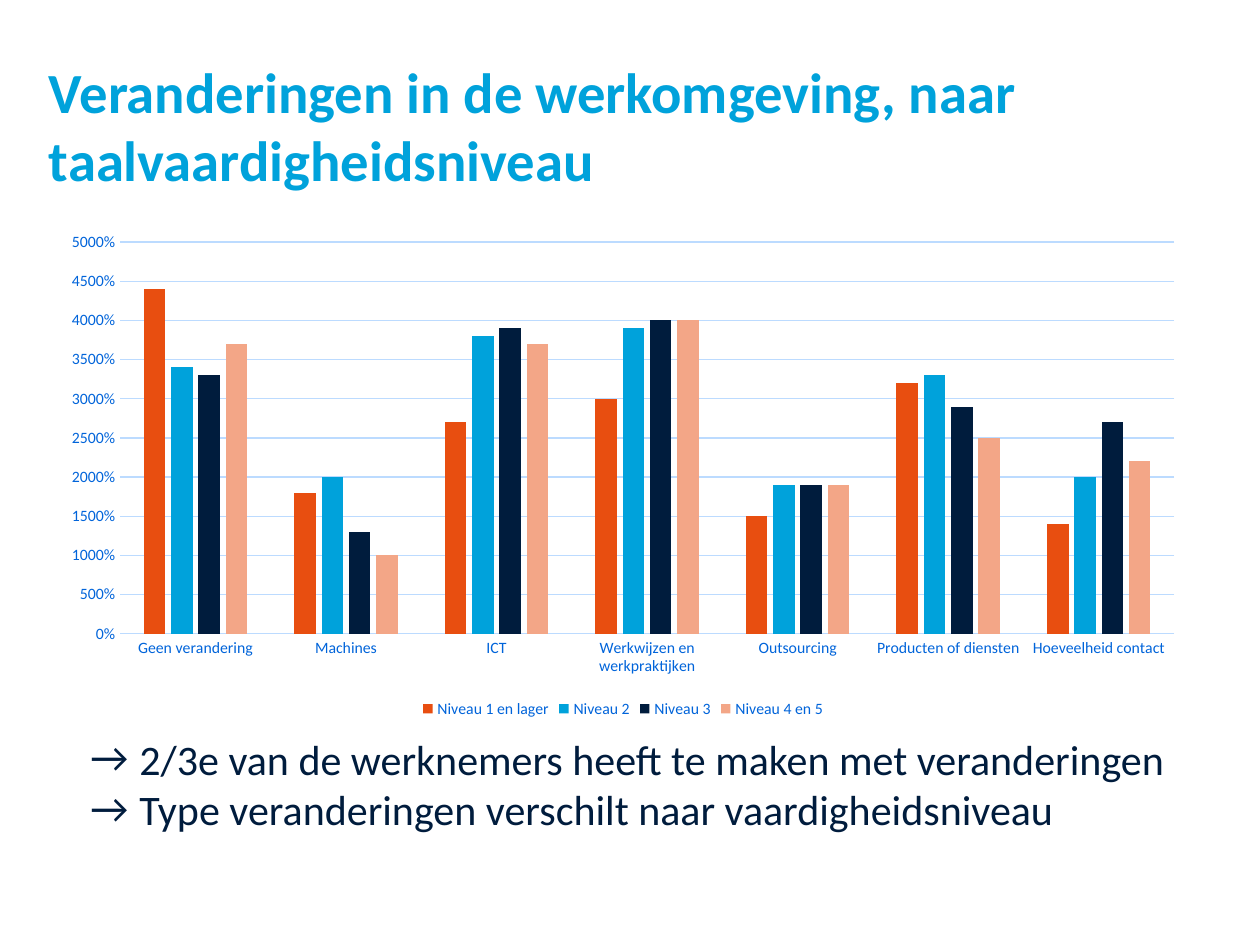
from lxml import etree
from pptx import Presentation
from pptx import util as u
from pptx.chart.data import CategoryChartData
from pptx.dml.color import RGBColor
from pptx.enum import chart as charts
from pptx.enum import text as texts
from pptx.oxml.ns import qn

SKY, NAVY, BLUE, PALE = "00A2DB", "001C3D", "0064DA", "BCDBFF"
CATS = ["Geen verandering", "Machines", "ICT", "Werkwijzen en werkpraktijken",
        "Outsourcing", "Producten of diensten", "Hoeveelheid contact"]
LEVELS = [
    ("Niveau 1 en lager", "E84E10", [44, 18, 27, 30, 15, 32, 14]),
    ("Niveau 2", SKY, [34, 20, 38, 39, 19, 33, 20]),
    ("Niveau 3", NAVY, [33, 13, 39, 40, 19, 29, 27]),
    ("Niveau 4 en 5", "F3A687", [37, 10, 37, 40, 19, 25, 22]),
]
POINTS = ["2/3e van de werknemers heeft te maken met veranderingen",
          "Type veranderingen verschilt naar vaardigheidsniveau"]


def tint(code):
    return RGBColor.from_string(code)


class Deck:
    face = "Calibri"

    def __init__(self, wide, high):
        self.show = Presentation()
        self.show.slide_width, self.show.slide_height = u.Pt(wide), u.Pt(high)
        self.page = self.show.slides.add_slide(self.show.slide_layouts[6])

    def style(self, font, size, code, bold=False):
        font.name, font.size, font.bold = self.face, u.Pt(size), bold
        font.color.rgb = tint(code)

    def text(self, box, lines, size, code, bold=False, inset=(0, 0), mark=None):
        frame = self.page.shapes.add_textbox(*map(u.Pt, box)).text_frame
        frame.word_wrap = True
        frame.vertical_anchor = texts.MSO_ANCHOR.TOP
        frame.margin_left = frame.margin_right = u.Pt(inset[0])
        frame.margin_top = frame.margin_bottom = u.Pt(inset[1])
        for i, line in enumerate(lines):
            para = frame.add_paragraph() if i else frame.paragraphs[0]
            if mark:
                self.bullet(para, mark, 28)
            run = para.add_run()
            run.text = line
            self.style(run.font, size, code, bold)

    def bullet(self, para, mark, gap):
        props = para._p.get_or_add_pPr()
        props.set("marL", str(u.Pt(gap)))
        props.set("indent", str(-u.Pt(gap)))
        etree.SubElement(props, qn("a:buFont")).set("typeface", self.face)
        etree.SubElement(props, qn("a:buChar")).set("char", mark)

    def line(self, form):
        form.line.color.rgb = tint(PALE)
        form.line.width = u.Pt(0.75)

    def bars(self, box, cats, rows):
        data = CategoryChartData(number_format="0")
        data.categories = cats
        for name, _, vals in rows:
            data.add_series(name, vals)
        chart = self.page.shapes.add_chart(
            charts.XL_CHART_TYPE.COLUMN_CLUSTERED, *map(u.Pt, box), data).chart
        self.style(chart.font, 10, NAVY)
        chart.has_title = False
        chart.has_legend = True
        chart.legend.position = charts.XL_LEGEND_POSITION.BOTTOM
        chart.legend.include_in_layout = False
        self.style(chart.legend.font, 9, BLUE)
        plot = chart.plots[0]
        plot.gap_width, plot.overlap, plot.vary_by_categories = 219, -27, False
        for bar, (_, code, _) in zip(plot.series, rows):
            bar.format.fill.solid()
            bar.format.fill.fore_color.rgb = tint(code)
            bar.invert_if_negative = False
        base, scale = chart.category_axis, chart.value_axis
        for axis in (base, scale):
            axis.major_tick_mark = axis.minor_tick_mark = charts.XL_TICK_MARK.NONE
            self.style(axis.tick_labels.font, 9, BLUE)
        self.line(base.format)
        scale.format.line.fill.background()
        scale.has_major_gridlines = True
        self.line(scale.major_gridlines.format)
        scale.minimum_scale, scale.maximum_scale, scale.major_unit = 0, 50, 5
        scale.tick_labels.number_format = "0%"
        scale.tick_labels.number_format_is_linked = False


def main():
    deck = Deck(720, 540)
    deck.text((28, 32.4, 656, 60),
              ["Veranderingen in de werkomgeving, naar taalvaardigheidsniveau"],
              32.4, SKY, bold=True)
    deck.bars((28, 127.4, 656, 285.8), CATS, LEVELS)
    deck.text((44.6, 415.4, 638.6, 65.5), POINTS, 24, NAVY,
              inset=(7.2, 3.6), mark="→")
    deck.show.save("out.pptx")


if __name__ == "__main__":
    main()
